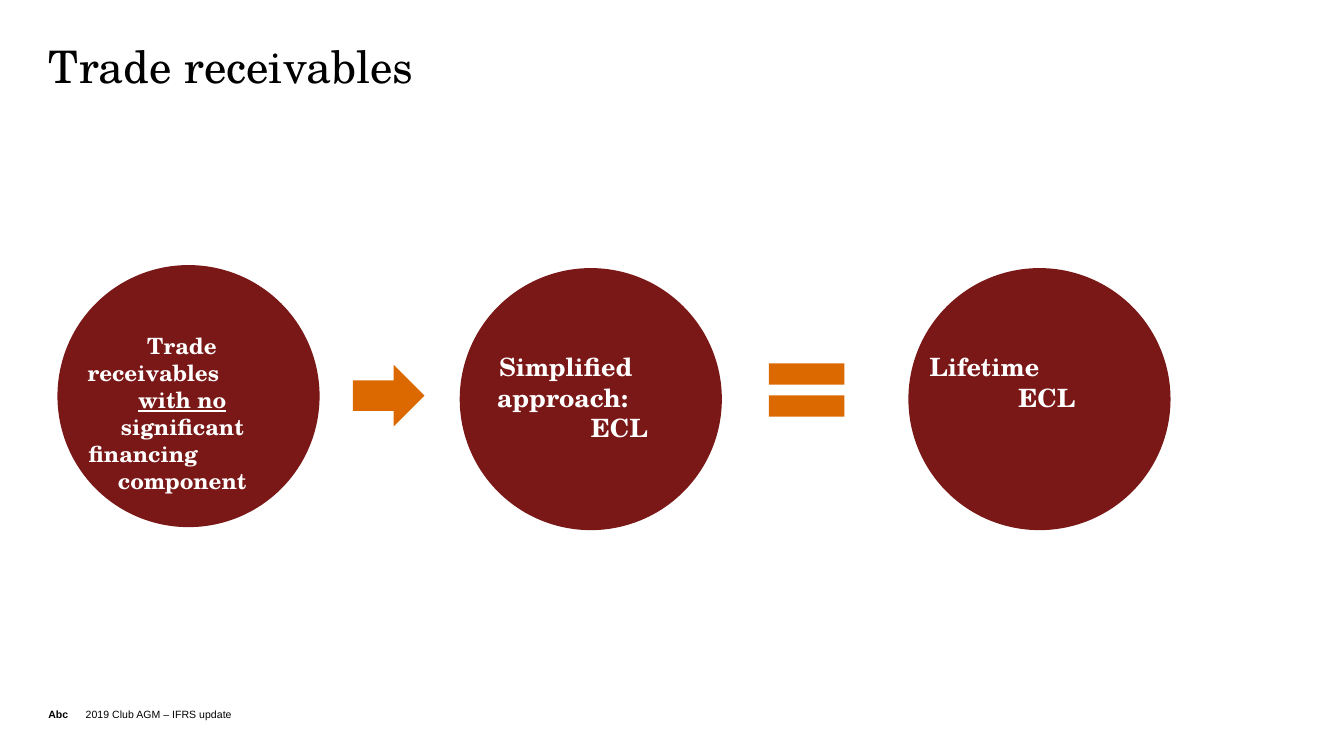
import pptx
import pptx.util
import pptx.dml.color
import pptx.enum.shapes
import pptx.enum.text

SERIF, SANS = "TeX Gyre Schola", "Arial"
MAROON, ORANGE, WHITE, BLACK = "7A1818", "DC6900", "FFFFFF", "000000"
DIAMETER = 2.6
Inches = pptx.util.Inches
Shape = pptx.enum.shapes.MSO_SHAPE
Anchor = pptx.enum.text.MSO_ANCHOR

presentation = pptx.Presentation()
presentation.slide_width = Inches(13.33)
presentation.slide_height = Inches(7.5)
slide = presentation.slides.add_slide(presentation.slide_layouts[6])


def add_filled(preset, left, top, width, height, color):
    shape = slide.shapes.add_shape(
        preset, Inches(left), Inches(top), Inches(width), Inches(height))
    shape.shadow.inherit = False
    shape.fill.solid()
    shape.fill.fore_color.rgb = pptx.dml.color.RGBColor.from_string(color)
    shape.line.fill.background()


def add_text(box, lines, size, font, color, bold=False, anchor=Anchor.TOP):
    """Write one paragraph per (text, left indent) pair."""
    frame = slide.shapes.add_textbox(*map(Inches, box)).text_frame
    frame.word_wrap = True
    frame.vertical_anchor = anchor
    frame.margin_left = frame.margin_right = 0
    frame.margin_top = frame.margin_bottom = 0
    for index, (text, indent) in enumerate(lines):
        paragraph = frame.add_paragraph() if index else frame.paragraphs[0]
        paragraph.text = text
        paragraph.font.size = pptx.util.Pt(size)
        paragraph.font.name = font
        paragraph.font.bold = bold
        paragraph.font.color.rgb = pptx.dml.color.RGBColor.from_string(color)
        if indent:
            paragraph._p.get_or_add_pPr().set("marL", str(Inches(indent)))
    return frame


# Title
title = add_text((0.48, 0.47, 12.36, 1.52), [("Trade receivables", 0)], 32, SERIF, BLACK)
title.paragraphs[0].line_spacing = 0.85

# Circles
for left, top in [(0.57, 2.63), (4.56, 2.66), (9.01, 2.66)]:
    add_filled(Shape.OVAL, left, top, DIAMETER, DIAMETER, MAROON)

# Signs between the circles
add_filled(Shape.RIGHT_ARROW, 3.5, 3.62, 0.71, 0.61, ORANGE)
add_filled(Shape.MATH_EQUAL, 7.49, 3.42, 1.02, 0.9, ORANGE)

# Circle labels, with stepped lines
receivables = add_text(
    (0.84, 3.3, 1.93, 1.57),
    [("Trade", 0.62), ("receivables", 0.03), ("with no", 0.53),
     ("significant", 0.36), ("financing", 0.04), ("component", 0.33)],
    16, SERIF, WHITE, bold=True)
receivables.paragraphs[2].font.underline = True
receivables.paragraphs[2].runs[0].font.underline = True
add_text((4.89, 3.49, 1.93, 1.57),
         [("Simplified", 0.06), ("approach:", 0.04), ("ECL", 0.97)],
         18, SERIF, WHITE, bold=True)
add_text((9.22, 3.49, 2.25, 1.57), [("Lifetime", 0), ("ECL", 0.88)],
         18, SERIF, WHITE, bold=True)

# Footer
add_text((0.48, 7, 0.33, 0.15), [("Abc", 0)], 7.5, SANS, BLACK,
         bold=True, anchor=Anchor.BOTTOM)
add_text((0.85, 7, 5.62, 0.15), [("2019 Club AGM – IFRS update", 0)], 7.5, SANS, BLACK,
         anchor=Anchor.BOTTOM)

presentation.save("out.pptx")
